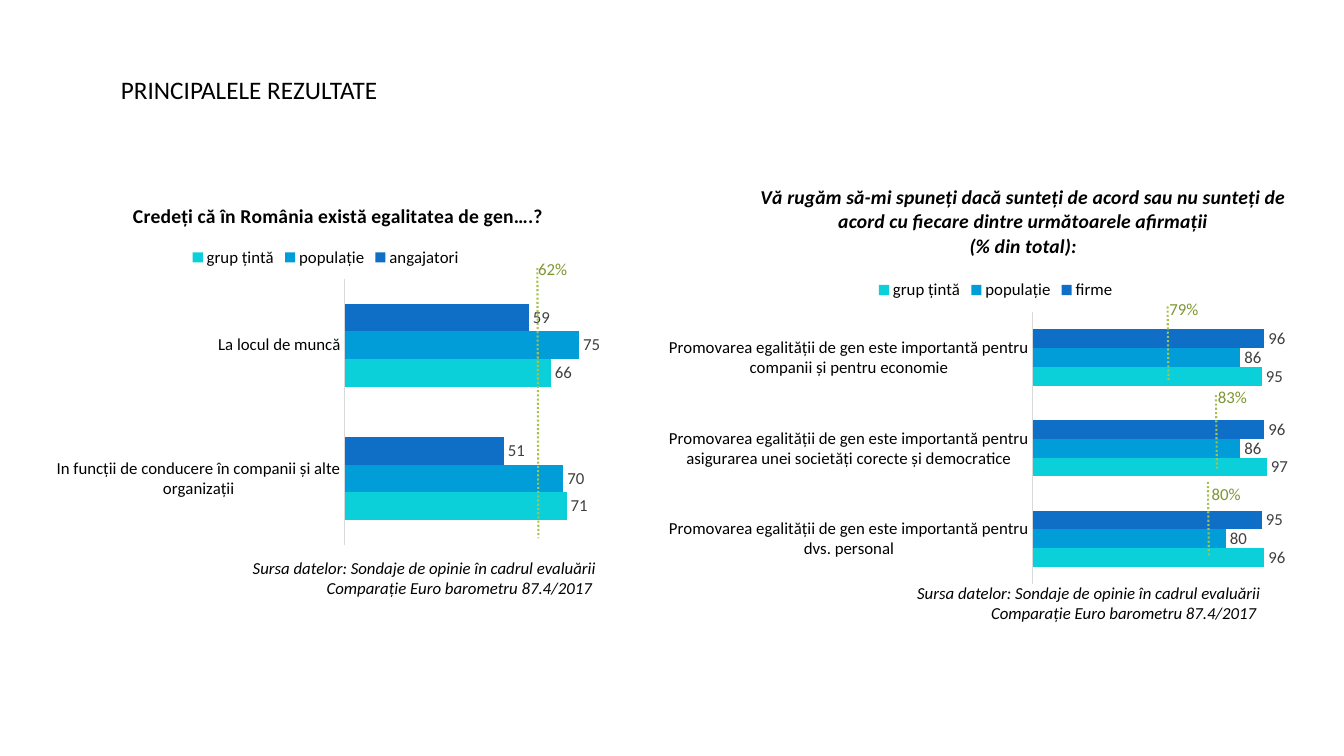
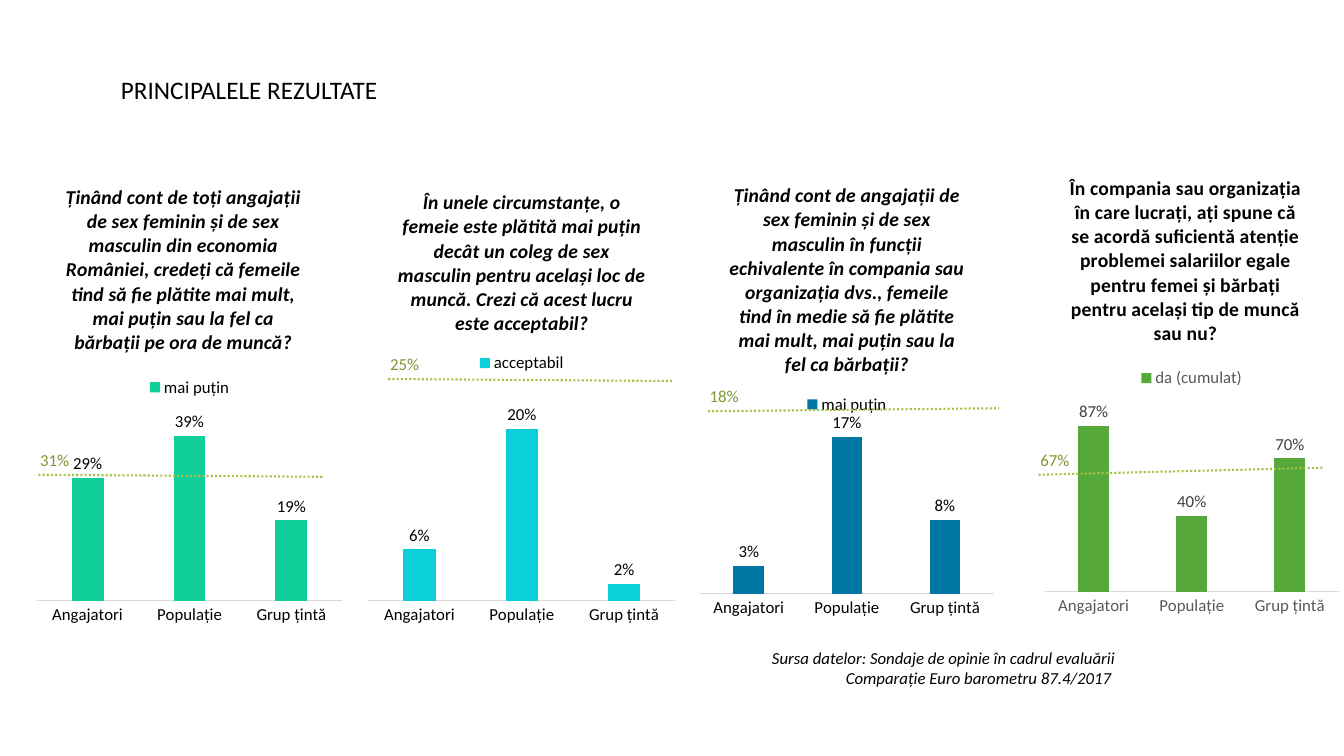
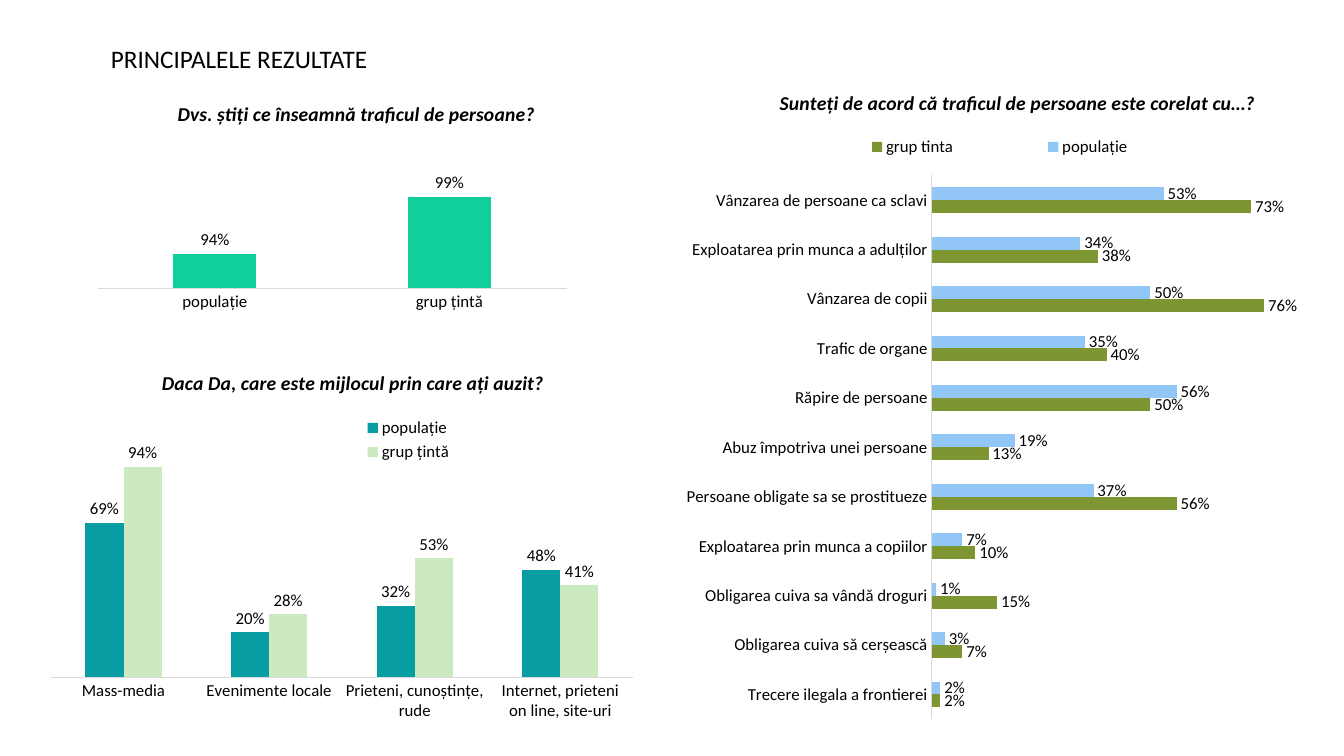
from pptx import Presentation
from pptx import util as u
from pptx.chart import data
from pptx.dml import color as dml_color
from pptx.enum import chart as charts, dml, shapes, text
from pptx.oxml import ns, xmlchemy

COLORS = {
    "black": "000000", "dark_grey": "404040", "grey": "595959", "axis": "D9D9D9",
    "average_line": "A5C249", "olive": "7E9632", "blue": "0F6FC6",
    "sky": "009DD9", "cyan": "0BD0D9", "mint": "10CF9B", "navy": "0076A3",
    "green": "55A839", "teal": "089CA3", "pale_green": "CBEAC0", "light_blue": "91C6F7",
}
SOURCE = ["Sursa datelor: Sondaje de opinie în cadrul evaluării",
          "Comparație Euro barometru 87.4/2017 "]
BAR = charts.XL_CHART_TYPE.BAR_CLUSTERED
COLUMN = charts.XL_CHART_TYPE.COLUMN_CLUSTERED
TOP = charts.XL_LEGEND_POSITION.TOP
RIGHT = charts.XL_LEGEND_POSITION.RIGHT


class Deck:
    """Holds the shared style and the slide being built."""

    font_name = "Calibri"

    def __init__(self):
        self.presentation = Presentation()
        self.presentation.slide_width = u.Inches(13.33)
        self.presentation.slide_height = u.Inches(7.5)
        self.slide = None

    def rgb(self, name):
        return dml_color.RGBColor.from_string(COLORS[name])

    def style_font(self, font, size, color="black", bold=False, italic=False):
        font.name, font.size = self.font_name, u.Pt(size)
        font.bold, font.italic = bold, italic
        font.color.rgb = self.rgb(color)

    def add_lines(self, frame, lines, size, align=None, **style):
        for index, line in enumerate(lines):
            paragraph = frame.paragraphs[0] if index == 0 else frame.add_paragraph()
            if align is not None:
                paragraph.alignment = align
            run = paragraph.add_run()
            run.text = line
            self.style_font(run.font, size, **style)

    def new_slide(self, left=1.1, top=0.69):
        self.slide = self.presentation.slides.add_slide(self.presentation.slide_layouts[5])
        title = self.slide.shapes.title
        title.left, title.top = u.Inches(left), u.Inches(top)
        title.width, title.height = u.Inches(3.42), u.Inches(0.4)
        frame = title.text_frame
        frame.auto_size = text.MSO_AUTO_SIZE.NONE
        frame.vertical_anchor = text.MSO_ANCHOR.TOP
        self.add_lines(frame, ["PRINCIPALELE REZULTATE"], 18, text.PP_ALIGN.LEFT)

    def text_box(self, left, top, width, height, lines, **style):
        box = self.slide.shapes.add_textbox(*map(u.Inches, (left, top, width, height)))
        box.text_frame.word_wrap = True
        self.add_lines(box.text_frame, lines, 12, **style)

    def source(self, left, top):
        self.text_box(left, top, 4.66, 0.5, SOURCE,
                      align=text.PP_ALIGN.RIGHT, italic=True)

    def average(self, label, start, end, label_at):
        """Dotted reference line with its percentage."""
        line = self.slide.shapes.add_connector(
            shapes.MSO_CONNECTOR.STRAIGHT, *map(u.Inches, (*start, *end)))
        line.line.color.rgb = self.rgb("average_line")
        line.line.width = u.Pt(1.5)
        line.line.dash_style = dml.MSO_LINE.ROUND_DOT
        properties = line._element.spPr
        properties.append(xmlchemy.OxmlElement("a:effectLst"))
        self.text_box(*label_at, 0.6, 0.3, [label], color="olive")

    def place(self, chart, tag, **box):
        """Fix a chart part at fractions of the chart area."""
        part = chart._chartSpace.find(".//" + ns.qn(tag))
        layout = part.find(ns.qn("c:layout"))
        if layout is None:
            layout = xmlchemy.OxmlElement("c:layout")
            overlay = part.find(ns.qn("c:overlay"))
            if overlay is None:
                part.insert(0, layout)
            else:
                overlay.addprevious(layout)
        manual = xmlchemy.OxmlElement("c:manualLayout")
        layout.append(manual)
        settings = {"xMode": "edge", "yMode": "edge", **box}
        if tag == "c:plotArea":
            settings = {"layoutTarget": "inner", **settings}
        for name, value in settings.items():
            child = xmlchemy.OxmlElement("c:" + name)
            child.set("val", str(value))
            manual.append(child)

    def chart(self, kind, at, title, categories, series, percent=True, italic=True,
              gap=182, overlap=0, ink="black", label_ink="black", legend=TOP,
              title_at=None, legend_box=None, plot_box=None, limits=None):
        number_format = "0%" if percent else "General"
        chart_data = data.CategoryChartData(number_format=number_format)
        chart_data.categories = categories
        for name, values, _ in series:
            chart_data.add_series(name, values)
        frame = self.slide.shapes.add_chart(kind, *map(u.Inches, at), chart_data)
        chart = frame.chart
        self.style_font(chart.font, 10)

        # Title and legend
        chart.has_title = True
        self.add_lines(chart.chart_title.text_frame, title, 14, bold=True, italic=italic)
        if title_at:
            self.place(chart, "c:title", x=title_at[0], y=title_at[1])
        chart.has_legend = legend is not None
        if legend is not None:
            chart.legend.position = legend
            chart.legend.include_in_layout = False
            self.style_font(chart.legend.font, 12, ink)
        if legend_box:
            self.place(chart, "c:legend", **dict(zip("xywh", legend_box)))
        if plot_box:
            self.place(chart, "c:plotArea", **dict(zip("xywh", plot_box)))

        # Axes
        axis = chart.category_axis
        axis.reverse_order = kind == BAR
        axis.has_major_gridlines = False
        axis.major_tick_mark = axis.minor_tick_mark = charts.XL_TICK_MARK.NONE
        axis.format.line.color.rgb = self.rgb("axis")
        axis.format.line.width = u.Pt(0.75)
        self.style_font(axis.tick_labels.font, 12, ink)
        value_axis = chart.value_axis
        value_axis.has_major_gridlines = False
        value_axis.visible = False
        if limits:
            value_axis.minimum_scale, value_axis.maximum_scale = limits

        # Bars and their labels
        plot = chart.plots[0]
        plot.gap_width, plot.overlap = gap, overlap
        plot.vary_by_categories = False
        for bars, (_, _, color) in zip(plot.series, series):
            bars.format.fill.solid()
            bars.format.fill.fore_color.rgb = self.rgb(color)
            bars.invert_if_negative = False
            labels = bars.data_labels
            labels.show_value = True
            labels.number_format = number_format
            labels.number_format_is_linked = False
            labels.position = charts.XL_LABEL_POSITION.OUTSIDE_END
            self.style_font(labels.font, 12, label_ink)


def equality_slide(deck):
    deck.new_slide()
    deck.chart(
        BAR, (0.45, 1.86, 5.56, 3.62),
        ["Credeți că în România există egalitatea de gen….?"],
        ["La locul de muncă", "In funcții de conducere în companii și alte organizații"],
        [("angajatori", (59, 51), "blue"),
         ("populație", (75, 70), "sky"),
         ("grup țintă", (66, 71), "cyan")],
        percent=False, italic=False, label_ink="dark_grey", title_at=(0.15, 0.03))
    deck.source(1.35, 5.48)
    promotion = "Promovarea egalității de gen este importantă pentru "
    deck.chart(
        BAR, (6.5, 1.71, 6.75, 4.17),
        ["Vă rugăm să-mi spuneți dacă sunteți de acord sau nu sunteți de acord "
         "cu fiecare dintre următoarele afirmații", "(% din total):"],
        [promotion + ending for ending in (
            "companii și pentru economie",
            "asigurarea unei societăți corecte și democratice",
            "dvs. personal")],
        [("firme", (96, 96, 95), "blue"),
         ("populație", (86, 86, 80), "sky"),
         ("grup țintă", (95, 97, 96), "cyan")],
        percent=False, label_ink="dark_grey", title_at=(0.15, 0.02))
    deck.source(7.94, 5.73)

    # Reference lines
    for label, x, top, length, label_at in (
            ("62%", 5.33, 2.66, 2.68, (5.24, 2.52)),
            ("79%", 11.58, 3.04, 0.75, (11.5, 2.91)),
            ("83%", 12.06, 3.92, 0.75, (11.98, 3.79)),
            ("80%", 11.98, 4.78, 0.75, (11.92, 4.75))):
        deck.average(label, (x, top), (x + 0.01, top + length), label_at)


def pay_slide(deck):
    deck.new_slide()
    groups = ["Angajatori", "Populație", "Grup țintă"]
    questions = (
        ((0.3, 1.69, 3.16, 4.6),
         "Ținând cont de toți angajații de sex feminin și de sex masculin din economia "
         "României, credeți că femeile tind să fie plătite mai mult, mai puțin sau la fel "
         "ca bărbații pe ora de muncă?",
         ("mai puțin", (0.29, 0.39, 0.19), "mint"), {"title_at": (0.1, 0.02)}),
        ((3.59, 1.69, 3.17, 4.6),
         "În unele circumstanțe, o femeie este plătită mai puțin decât un coleg de sex "
         "masculin pentru același loc de muncă. Crezi că acest lucru este acceptabil?",
         ("acceptabil", (0.06, 0.2, 0.02), "cyan"), {}),
        ((6.88, 1.62, 3.04, 4.6),
         "Ținând cont de angajații de sex feminin și de sex masculin în funcții "
         "echivalente în compania sau organizația dvs., femeile tind în medie să fie "
         "plătite mai mult, mai puțin sau la fel ca bărbații?",
         ("mai puțin", (0.03, 0.17, 0.08), "navy"), {}),
        ((10.3, 1.6, 3.04, 4.6),
         "În compania sau organizația în care lucrați, ați spune că se acordă suficientă "
         "atenție problemei salariilor egale pentru femei și bărbați pentru același tip "
         "de muncă sau nu?",
         ("da (cumulat)", (0.87, 0.4, 0.7), "green"),
         {"italic": False, "ink": "grey", "label_ink": "dark_grey",
          "title_at": (0.09, 0.02)}),
    )
    for at, question, series, options in questions:
        deck.chart(COLUMN, at, [question], groups, [series],
                   gap=219, overlap=-27, **options)

    # Reference lines, each label just above the start of its line
    for label, start, end in (
            ("31%", (0.38, 4.71), (3.2, 4.73)),
            ("25%", (3.85, 3.76), (6.67, 3.78)),
            ("18%", (7.02, 4.08), (9.91, 4.05)),
            ("67%", (10.3, 4.71), (13.12, 4.64))):
        deck.average(label, start, end, (start[0] - 0.08, start[1] - 0.3))
    deck.source(6.5, 6.38)


def trafficking_slide(deck):
    deck.new_slide(1, 0.38)
    deck.chart(
        COLUMN, (0.44, 3.45, 6.28, 4.36),
        ["Daca Da, care este mijlocul prin care ați auzit?"],
        ["Mass-media", "Evenimente locale", "Prieteni, cunoștințe, rude",
         "Internet, prieteni on line, site-uri"],
        [("populație", (0.69, 0.2, 0.32, 0.48), "teal"),
         ("grup țintă", (0.94, 0.28, 0.53, 0.41), "pale_green")],
        legend=RIGHT, title_at=(0.18, 0.04), legend_box=(0.5, 0.15, 0.15, 0.12),
        plot_box=(0.01, 0.24, 0.92, 0.51), limits=(0, 1))
    deck.chart(
        BAR, (6.54, 0.79, 6.43, 6.35),
        ["Sunteți de acord că traficul de persoane este corelat cu…?"],
        ["Vânzarea de persoane ca sclavi", "Exploatarea prin munca a adulților",
         "Vânzarea de copii", "Trafic de organe", "Răpire de persoane",
         "Abuz împotriva unei persoane", "Persoane obligate sa se prostitueze",
         "Exploatarea prin munca a copiilor", "Obligarea cuiva sa vândă droguri",
         "Obligarea cuiva să cerșească", "Trecere ilegala a frontierei"],
        [("populație", (0.53, 0.34, 0.5, 0.35, 0.56, 0.19, 0.37, 0.07, 0.01, 0.03, 0.02),
          "light_blue"),
         ("grup tinta", (0.73, 0.38, 0.76, 0.4, 0.5, 0.13, 0.56, 0.1, 0.15, 0.07, 0.02),
          "olive")],
        title_at=(0.18, 0.01), legend_box=(0.19, 0.08, 0.67, 0.05),
        plot_box=(0.42, 0.15, 0.54, 0.85), limits=(0, 0.8))
    deck.chart(
        COLUMN, (0.59, 0.79, 5.41, 2.76),
        ["Dvs. știți ce înseamnă traficul de persoane?"],
        ["populație", "grup țintă"], [("da", (0.94, 0.99), "mint")],
        legend=None, title_at=(0.21, 0.06),
        plot_box=(0.07, 0.38, 0.86, 0.37), limits=(0.91, 1))


def main():
    deck = Deck()
    equality_slide(deck)
    pay_slide(deck)
    trafficking_slide(deck)
    deck.presentation.save("out.pptx")


if __name__ == "__main__":
    main()
